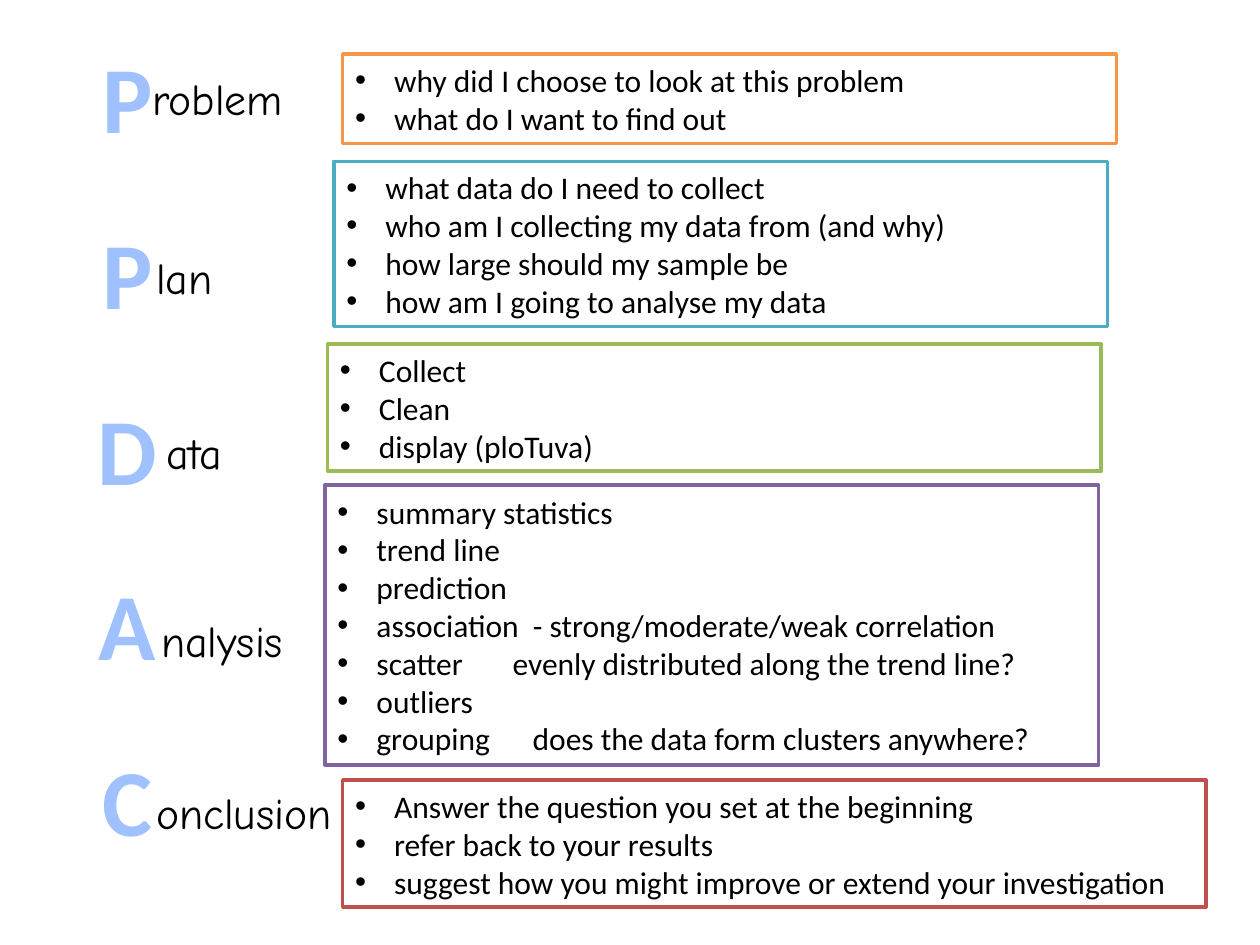
from lxml import etree
from pptx import Presentation
from pptx.dml.color import RGBColor
from pptx.enum.shapes import MSO_SHAPE
from pptx.enum.text import MSO_ANCHOR, PP_ALIGN
from pptx.oxml.ns import qn
from pptx.util import Inches, Pt

RECTANGLE = MSO_SHAPE.RECTANGLE
CENTER, LEFT = PP_ALIGN.CENTER, PP_ALIGN.LEFT
MIDDLE = MSO_ANCHOR.MIDDLE


def color(hex_code):
    return RGBColor.from_string(hex_code)


def set_font(paragraph, name, size, hex_code):
    paragraph.font.name = name
    paragraph.font.size = Pt(size)
    paragraph.font.color.rgb = color(hex_code)


prs = Presentation()
prs.slide_width, prs.slide_height = Inches(10), Inches(7.5)
slide = prs.slides.add_slide(prs.slide_layouts[6])

initials = slide.shapes.add_textbox(
    Inches(0.67), Inches(0.26), Inches(0.68), Inches(6.66)
).text_frame
initials.word_wrap = False
initials.text = "\n".join("PPDAC")
for index, initial in enumerate(initials.paragraphs):
    initial.alignment = CENTER
    if index:
        initial.space_before = Pt(35.7)
    set_font(initial, "Calibri", 54, "A0C1FF")
    initial.font.bold = True

word_endings = [
    ("roblem", 1.11, 0.52),
    ("lan", 1.14, 1.94),
    ("ata", 1.22, 3.33),
    ("nalysis", 1.18, 4.82),
    ("onclusion", 1.14, 6.19),
]
for ending, left, top in word_endings:
    label = slide.shapes.add_textbox(
        Inches(left), Inches(top), Inches(1.81), Inches(0.52)
    ).text_frame
    label.word_wrap = True
    label.text = ending
    set_font(label.paragraphs[0], "Comic Neue", 25, "000000")

stages = [
    (2.72, 0.43, 6.14, 0.71, "F79646", [
        "why did I choose to look at this problem",
        "what do I want to find out",
    ]),
    (2.65, 1.28, 6.14, 1.31, "4BACC6", [
        "what data do I need to collect",
        "who am I collecting my data from (and why)",
        "how large should my sample be",
        "how am I going to analyse my data",
    ]),
    (2.6, 2.73, 6.14, 1.01, "9BBB59", [
        "Collect",
        "Clean",
        "display (ploTuva)",
    ]),
    (2.58, 3.85, 6.14, 2.22, "8064A2", [
        "summary statistics",
        "trend line",
        "prediction",
        "association  - strong/moderate/weak correlation",
        "scatter\tevenly distributed along the trend line?",
        "outliers",
        "grouping\tdoes the data form clusters anywhere?",
    ]),
    (2.72, 6.19, 6.85, 1.01, "C0504D", [
        "Answer the question you set at the beginning",
        "refer back to your results",
        "suggest how you might improve or extend your investigation",
    ]),
]
question_tabs = {"scatter": 1.39, "grouping": 1.55}

for left, top, width, height, outline, points in stages:
    stage = slide.shapes.add_shape(
        RECTANGLE, Inches(left), Inches(top), Inches(width), Inches(height)
    )
    stage.shadow.inherit = False
    stage.fill.solid()
    stage.fill.fore_color.rgb = color("FFFFFF")
    stage.line.color.rgb = color(outline)
    stage.line.width = Pt(2)
    frame = stage.text_frame
    frame.word_wrap = True
    frame.vertical_anchor = MIDDLE
    frame.text = "\n".join(points)
    for point in frame.paragraphs:
        point.alignment = LEFT
        properties = point._p.get_or_add_pPr()
        properties.set("marL", str(Inches(0.31)))
        properties.set("indent", str(Inches(-0.31)))
        etree.SubElement(properties, qn("a:buFont"), typeface="Arial")
        etree.SubElement(properties, qn("a:buChar"), char="•")
        term = point.text.split("\t")[0]
        if term in question_tabs:
            tabs = etree.SubElement(properties, qn("a:tabLst"))
            etree.SubElement(
                tabs, qn("a:tab"), pos=str(Inches(question_tabs[term])), algn="l"
            )
        set_font(point, "Calibri", 18, "000000")

prs.save("out.pptx")
